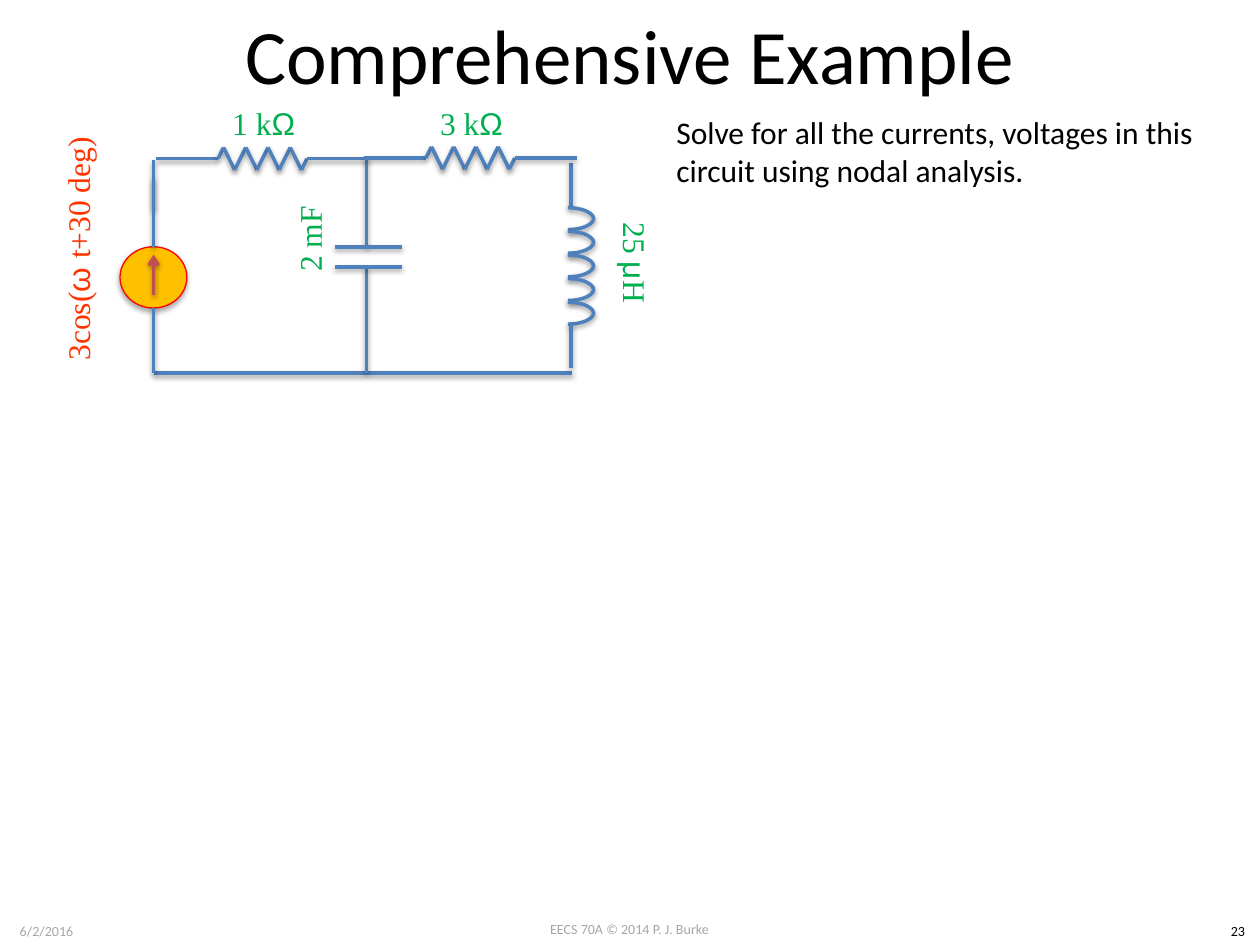
from itertools import pairwise

from lxml.etree import SubElement
from pptx import Presentation
from pptx.dml.color import RGBColor
from pptx.enum.shapes import MSO_CONNECTOR, MSO_SHAPE
from pptx.enum.text import MSO_ANCHOR as Anchor, MSO_AUTO_SIZE, PP_ALIGN as Align
from pptx.oxml.ns import qn
from pptx.util import Pt

BLACK = RGBColor(0x00, 0x00, 0x00)
GRAY = RGBColor(0xA6, 0xA6, 0xA6)
BLUE = RGBColor(0x4F, 0x81, 0xBD)
GREEN = RGBColor(0x00, 0xB0, 0x50)
ORANGE = RGBColor(0xFF, 0x33, 0x00)
GOLD = RGBColor(0xFF, 0xC0, 0x00)
RED = RGBColor(0xFF, 0x00, 0x00)
BRICK = RGBColor(0xC0, 0x50, 0x4D)

SERIF, SANS, BODY = "Times New Roman", "Arial", "Calibri"
LABEL_SIZE = (85.7, 52.6)

SOURCE_X, CAPACITOR_X, INDUCTOR_X = 87.8, 209.5, 326.2
BOTTOM_Y = 213.1
PLATE_YS = (141.1, 152.6)


def add_shadow(shape, opacity=38, distance=1.6):
    """Replace the theme effect with a soft shadow straight below."""
    properties = shape._element.spPr
    for effects in properties.findall(qn("a:effectLst")):
        properties.remove(effects)
    effects = SubElement(properties, qn("a:effectLst"))
    shadow = SubElement(effects, qn("a:outerShdw"), blurRad=str(Pt(3.1)),
                        dist=str(Pt(distance)), dir="5400000", rotWithShape="0")
    color = SubElement(shadow, qn("a:srgbClr"), val=str(BLACK))
    SubElement(color, qn("a:alpha"), val=str(opacity * 1000))


def add_wire(shapes, start, end, color=BLUE, arrow=False):
    wire = shapes.add_connector(MSO_CONNECTOR.STRAIGHT,
                                *(Pt(value) for value in (*start, *end)))
    wire.line.color.rgb = color
    wire.line.width = Pt(2)
    if arrow:
        SubElement(wire.line._get_or_add_ln(), qn("a:tailEnd"), type="arrow")
    add_shadow(wire)


def add_text(shapes, left, top, width, height, runs, size=18, color=BLACK,
             align=Align.CENTER, anchor=Anchor.TOP, rotation=0):
    """Add a one-paragraph text box; runs are (text, font) pairs."""
    box = shapes.add_textbox(Pt(left), Pt(top), Pt(width), Pt(height))
    box.rotation = rotation
    frame = box.text_frame
    frame.word_wrap = True
    frame.vertical_anchor = anchor
    paragraph = frame.paragraphs[0]
    paragraph.alignment = align
    for text, font in runs:
        run = paragraph.add_run()
        run.text = text
        run.font.name = font
        run.font.size = Pt(size)
        run.font.color.rgb = color


def add_label(shapes, left, top, runs, rotation=0, size=LABEL_SIZE, color=GREEN):
    add_text(shapes, left, top, *size, runs, color=color,
             anchor=Anchor.MIDDLE, rotation=rotation)


def add_resistor(shapes, left, middle, value):
    """Draw a zigzag with a lead on each side and its value above."""
    group = shapes.add_group_shape().shapes
    lead, step, swing = 35.3, 6.35, 6.4
    add_label(group, left + 18.5, middle - 46.6, [(value, SERIF), ("Ω", SANS)])
    first_peak = left + lead + step / 2
    zigzag = [(first_peak + step * i, middle + (swing if i % 2 else -swing))
              for i in range(8)]
    zigzag_end = first_peak + step * 7.5
    points = [(left, middle), (left + lead, middle), *zigzag,
              (zigzag_end, middle), (zigzag_end + lead, middle)]
    for start, end in pairwise(points):
        add_wire(group, start, end)


def add_current_source(shapes):
    group = shapes.add_group_shape().shapes
    circle = group.add_shape(MSO_SHAPE.OVAL, Pt(68.6), Pt(141), Pt(38.2), Pt(35))
    circle.fill.solid()
    circle.fill.fore_color.rgb = GOLD
    circle.line.color.rgb = RED
    circle.line.width = Pt(0.75)
    add_shadow(circle, opacity=35, distance=1.8)
    add_wire(group, (SOURCE_X, 168.5), (SOURCE_X, 145.4), BRICK, arrow=True)
    add_wire(group, (SOURCE_X, 141), (SOURCE_X, 101.5))
    add_wire(group, (SOURCE_X, 176), (SOURCE_X, BOTTOM_Y))


def add_capacitor(shapes):
    upper, lower = PLATE_YS
    add_wire(shapes, (CAPACITOR_X, BOTTOM_Y), (CAPACITOR_X, lower))
    add_wire(shapes, (CAPACITOR_X, upper), (CAPACITOR_X, 90.7))
    add_label(shapes, 133.9, 110.2, [("2 mF", SERIF)], rotation=270)
    for y in PLATE_YS:
        add_wire(shapes, (191.5, y), (229.7, y))


def add_inductor(shapes):
    """Draw five turns, each a quarter arc and its mirror, between two leads."""
    group = shapes.add_group_shape().shapes
    turn_height = 13.5
    add_wire(group, (INDUCTOR_X, 118.1), (INDUCTOR_X, 92.9))
    for turn in range(5):
        for top, mirrored in ((118.7, False), (118.2, True)):
            arc = group.add_shape(MSO_SHAPE.ARC, Pt(309.8),
                                  Pt(top + turn * turn_height), Pt(29.5), Pt(13))
            arc.fill.background()
            arc.line.color.rgb = BLUE
            arc.line.width = Pt(2)
            if mirrored:
                arc._element.spPr.xfrm.set("flipV", "1")
            add_shadow(arc)
    add_wire(group, (INDUCTOR_X, 210.2), (INDUCTOR_X, 185))


def add_title(slide, text):
    title = slide.shapes.title
    title.left, title.top, title.width, title.height = Pt(36), Pt(0), Pt(648), Pt(61.2)
    frame = title.text_frame
    frame.auto_size = MSO_AUTO_SIZE.NONE
    frame.vertical_anchor = Anchor.MIDDLE
    paragraph = frame.paragraphs[0]
    paragraph.alignment = Align.CENTER
    run = paragraph.add_run()
    run.text = text
    run.font.name = BODY
    run.font.size = Pt(44)
    run.font.color.rgb = BLACK


def add_footer(shapes):
    for text, left, top, width, color in (
            ("EECS 70A © 2014 P. J. Burke", 275.8, 522.7, 168, GRAY),
            ("6/2/2016", 0, 523.4, 53.3, GRAY),
            ("23", 694.8, 523.4, 25.2, BLACK)):
        add_text(shapes, left, top, width, 17, [(text, BODY)], size=8, color=color)


def main():
    presentation = Presentation()
    presentation.slide_width, presentation.slide_height = Pt(720), Pt(540)
    slide = presentation.slides.add_slide(presentation.slide_layouts[5])
    shapes = slide.shapes

    add_footer(shapes)
    add_title(slide, "Comprehensive Example")
    add_resistor(shapes, 89.3, 90.7, "1 k")
    add_wire(shapes, (SOURCE_X, BOTTOM_Y), (326.9, BOTTOM_Y))
    add_label(shapes, -31.7, 120.2,
              [("3cos(", SERIF), ("ω ", SANS), ("t+30 deg)", SERIF)],
              rotation=270, size=(151.9, 43.9), color=ORANGE)
    add_text(shapes, 379.4, 61.2, 330.5, 51.1,
             [("Solve for all the currents, voltages in this circuit "
               "using nodal analysis.", BODY)], align=Align.LEFT)
    add_wire(shapes, (SOURCE_X, 119.5), (SOURCE_X, 91.4))
    add_current_source(shapes)
    add_label(shapes, 320.4, 123.8,
              [("25 ", SERIF), ("μ", SANS), ("H", SERIF)], rotation=90)
    add_capacitor(shapes)
    add_inductor(shapes)
    add_resistor(shapes, 208.1, 90.3, "3 k")

    presentation.save("out.pptx")


if __name__ == "__main__":
    main()
